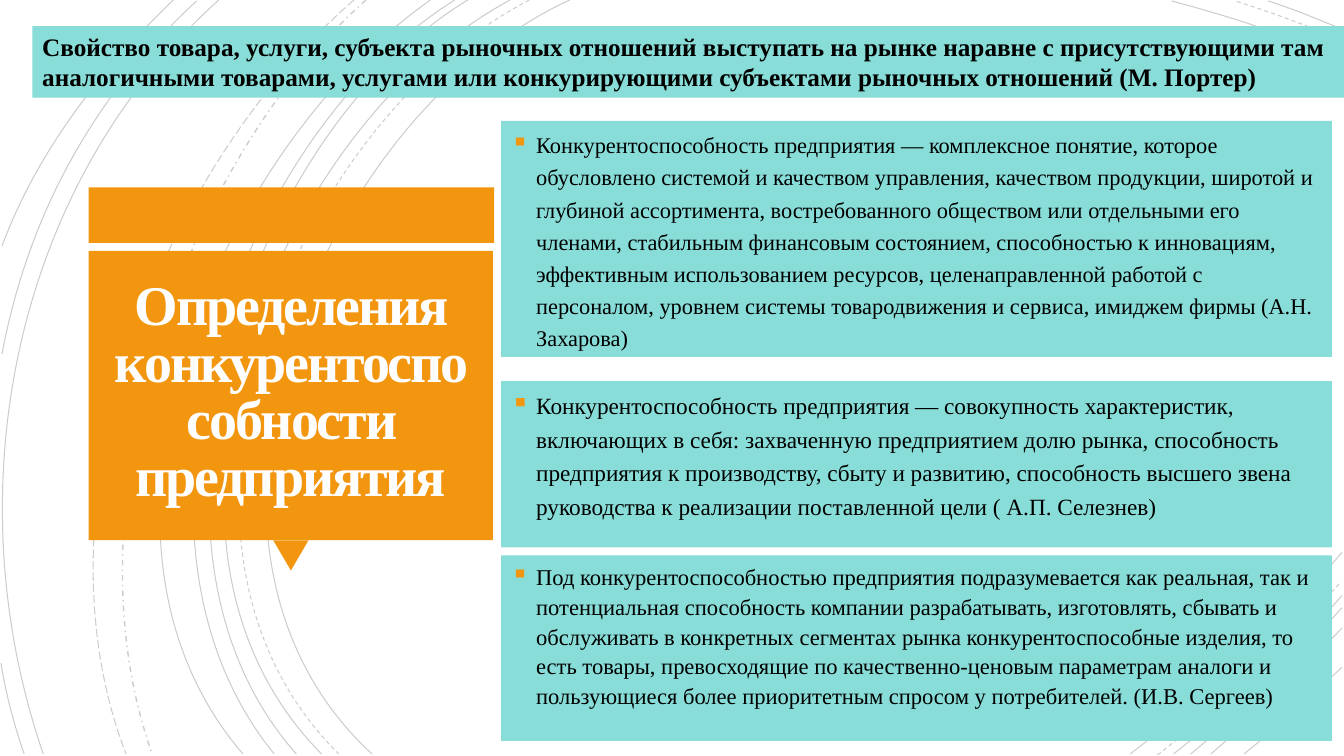
from lxml import etree
from pptx import Presentation
from pptx import util as u
from pptx.dml.color import RGBColor
from pptx.enum import dml, shapes, text
from pptx.oxml import ns

HUES = {"orange": "F3960F", "teal": "88DDD8", "black": "000000", "white": "FFFEFF"}
FACE = "Times New Roman"
SOLID = dml.MSO_LINE.SOLID
DASH = dml.MSO_LINE.DASH
LONG = dml.MSO_LINE.LONG_DASH
DOT = dml.MSO_LINE.DASH_DOT

ARCS = [
    (SOLID, 0.75, (5.65, 0), (3.15, 1.15), (1.43, 5.4), (3.69, 7.48)),
    (SOLID, 0.75, (13.31, 0.62), (12.78, 0.34), (12.18, 0.16), (11.62, 0.01)),
    (SOLID, 0.75, (11.21, 7.48), (11.97, 6.9), (12.69, 6.22), (13.31, 5.48)),
    (DASH, 0.75, (5.25, 0), (2.85, 1.25), (1.23, 5.37), (3.36, 7.48)),
    (DASH, 0.75, (13.31, 0.41), (12.97, 0.25), (12.6, 0.12), (12.25, 0.01)),
    (DASH, 0.75, (11.48, 7.49), (12.13, 6.98), (12.75, 6.4), (13.3, 5.77)),
    (SOLID, 0.75, (5.06, 0), (2.7, 1.27), (1.1, 5.37), (3.19, 7.48)),
    (SOLID, 0.75, (13.31, 0.29), (13.07, 0.19), (12.83, 0.09), (12.58, 0.01)),
    (SOLID, 0.75, (11.64, 7.48), (12.23, 7.01), (12.8, 6.48), (13.31, 5.91)),
    (SOLID, 0.75, (4.64, 0), (2.44, 1.33), (1.1, 5.41), (2.94, 7.48)),
    (SOLID, 0.75, (11.81, 7.48), (12.34, 7.04), (12.84, 6.55), (13.31, 6.03)),
    (SOLID, 0.75, (4.51, 0), (2.31, 1.38), (0.97, 5.33), (2.72, 7.48)),
    (SOLID, 0.75, (12.01, 7.48), (12.46, 7.09), (12.9, 6.67), (13.31, 6.23)),
    (SOLID, 0.75, (4.27, 0), (2.17, 1.47), (0.53, 5.29), (2.41, 7.48)),
    (SOLID, 0.75, (12.34, 7.48), (12.67, 7.21), (12.99, 6.92), (13.31, 6.62)),
    (DOT, 1, (3.63, 0), (1.76, 1.66), (0.65, 5.09), (1.51, 7.48)),
    (LONG, 0.75, (3.51, 0), (1.57, 1.69), (0.29, 4.99), (1.25, 7.48)),
    (SOLID, 0.75, (2.17, 0), (0.11, 1.85), (-0.46, 4.9), (0.43, 7.48)),
    (SOLID, 0.75, (1.95, 0.01), (0.92, 0.96), (0.28, 2.14), (0.02, 3.51)),
    (SOLID, 0.75, (0.01, 6.58), (0.06, 6.89), (0.14, 7.19), (0.24, 7.48)),
    (SOLID, 0.75, (1.72, 0), (1, 0.69), (0.37, 1.5), (0.02, 2.44)),
]

HEAD = (
    "Свойство товара, услуги, субъекта рыночных отношений выступать на рынке наравне "
    "с присутствующими там аналогичными товарами, услугами или конкурирующими "
    "субъектами рыночных отношений (М. Портер)"
)
NOTES = [
    (1.2, 2.34, 16, 1.2,
     "Конкурентоспособность предприятия — комплексное понятие, которое обусловлено "
     "системой и качеством управления, качеством продукции, широтой и глубиной "
     "ассортимента, востребованного обществом или отдельными его членами, стабильным "
     "финансовым состоянием, способностью к инновациям, эффективным использованием "
     "ресурсов, целенаправленной работой с персоналом, уровнем системы товародвижения "
     "и сервиса, имиджем фирмы (А.Н. Захарова)"),
    (3.78, 1.65, 16.6, 1.2,
     "Конкурентоспособность предприятия — совокупность характеристик, включающих в "
     "себя: захваченную предприятием долю рынка, способность предприятия к "
     "производству, сбыту и развитию, способность высшего звена руководства к "
     "реализации поставленной цели ( А.П. Селезнев)"),
    (5.51, 1.84, 16.1, 1.1,
     "Под конкурентоспособностью предприятия подразумевается как реальная, так и "
     "потенциальная способность компании разрабатывать, изготовлять, сбывать и "
     "обслуживать в конкретных сегментах рынка конкурентоспособные изделия, то есть "
     "товары, превосходящие по качественно-ценовым параметрам аналоги и пользующиеся "
     "более приоритетным спросом у потребителей. (И.В. Сергеев)"),
]


def hue(name):
    """Return the named colour."""
    return RGBColor.from_string(HUES[name])


def add_tag(parent, name, **attrs):
    """Append a drawing element with the given attributes."""
    return etree.SubElement(parent, ns.qn(name), attrs)


def add_arc(slide, dash, width, *knots):
    """Draw a faint open cubic curve."""
    start, *rest = [tuple(map(u.Inches, knot)) for knot in knots]
    pen = slide.shapes.build_freeform(*start)
    pen.add_line_segments(rest, close=False)
    arc = pen.convert_to_shape()
    legs = list(arc._element.iter(ns.qn("a:lnTo")))
    curve = add_tag(legs[0].getparent(), "a:cubicBezTo")
    for leg in legs:
        curve.append(leg[0])
        leg.getparent().remove(leg)
    arc.shadow.inherit = False
    arc.fill.background()
    arc.line.color.rgb = hue("black")
    arc.line.width = u.Pt(width)
    arc.line.dash_style = dash
    tint = arc._element.spPr.find(ns.qn("a:ln")).find(".//" + ns.qn("a:srgbClr"))
    add_tag(tint, "a:alpha", val="20000")


def add_block(slide, area, tone, kind=shapes.MSO_SHAPE.RECTANGLE):
    """Add a plain filled shape without an outline."""
    block = slide.shapes.add_shape(kind, *map(u.Inches, area))
    block.shadow.inherit = False
    block.fill.solid()
    block.fill.fore_color.rgb = hue(tone)
    block.line.fill.background()
    return block


def add_words(shape, words, size, tone="black", bold=False,
              align=text.PP_ALIGN.LEFT, anchor=text.MSO_ANCHOR.TOP):
    """Write one paragraph and return it with its run."""
    frame = shape.text_frame
    frame.word_wrap = True
    frame.vertical_anchor = anchor
    para = frame.paragraphs[0]
    para.alignment = align
    run = para.add_run()
    run.text = words
    run.font.name = FACE
    run.font.size = u.Pt(size)
    run.font.bold = bold
    run.font.color.rgb = hue(tone)
    return para, run


def add_note(slide, top, height, size, pitch, words):
    """Add a teal panel with one bulleted definition."""
    panel = add_block(slide, (4.97, top, 8.24, height), "teal")
    para, _ = add_words(panel, words, size)
    para.line_spacing = pitch
    para.space_before = u.Pt(10)
    props = para._p.get_or_add_pPr()
    props.set("marL", str(u.Inches(0.25)))
    props.set("indent", str(-u.Inches(0.25)))
    add_tag(add_tag(props, "a:buClr"), "a:srgbClr", val=HUES["orange"])
    add_tag(props, "a:buSzPct", val="110000")
    add_tag(props, "a:buChar", char="▪")


def add_title(slide):
    """Add the orange callout and the slide title."""
    add_block(slide, (0.88, 1.86, 4.02, 0.55), "orange")
    tip = add_block(slide, (2.71, 5.36, 0.35, 0.3), "orange",
                    shapes.MSO_SHAPE.ISOSCELES_TRIANGLE)
    tip.rotation = 180
    add_block(slide, (0.88, 2.49, 4.01, 2.87), "orange")
    box = slide.shapes.add_textbox(*map(u.Inches, (0.97, 2.56, 3.83, 2.7)))
    frame = box.text_frame
    frame.margin_left = frame.margin_right = u.Inches(0.1)
    frame.margin_top = frame.margin_bottom = u.Inches(0.1)
    para, run = add_words(box, "Определения конкурентоспособности предприятия", 40,
                          "white", True, text.PP_ALIGN.CENTER, text.MSO_ANCHOR.MIDDLE)
    para.line_spacing = 0.85
    run.font._element.set("spc", "-150")


def main():
    """Build and save the slide."""
    deck = Presentation()
    deck.slide_width = u.Inches(13.33)
    deck.slide_height = u.Inches(7.5)
    slide = deck.slides.add_slide(deck.slide_layouts[6])
    for arc in ARCS:
        add_arc(slide, *arc)
    add_title(slide)
    for note in NOTES:
        add_note(slide, *note)
    band = add_block(slide, (0.32, 0.26, 13.02, 0.71), "teal")
    add_words(band, HEAD, 18, bold=True)
    band.text_frame.auto_size = text.MSO_AUTO_SIZE.SHAPE_TO_FIT_TEXT
    deck.save("out.pptx")


if __name__ == "__main__":
    main()
